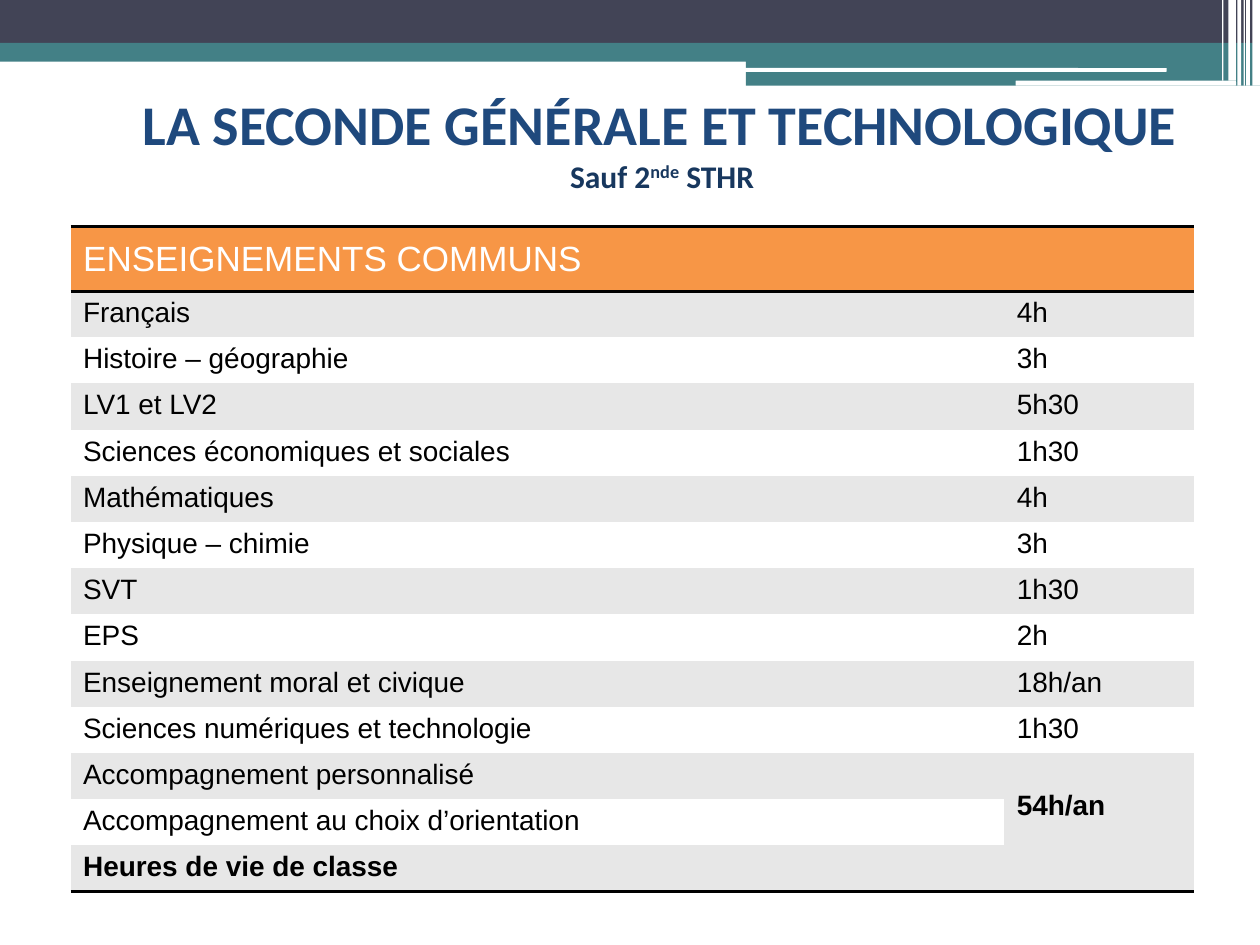
from dataclasses import dataclass

from lxml.etree import SubElement
from pptx import Presentation
from pptx.dml.color import RGBColor
from pptx.enum.shapes import MSO_SHAPE
from pptx.enum.text import MSO_ANCHOR, MSO_AUTO_SIZE, PP_ALIGN
from pptx.oxml.ns import qn
from pptx.util import Inches, Pt


@dataclass(frozen=True)
class Theme:
    teal: str = "438086"
    slate: str = "424456"
    white: str = "FFFFFF"
    black: str = "000000"
    title: str = "1F497D"
    subtitle: str = "17375E"
    orange: str = "F79646"
    grey: str = "E7E7E7"
    title_font: str = "Calibri"
    table_font: str = "Arial"
    title_size: int = 32
    subtitle_size: int = 18
    header_size: int = 20
    body_size: int = 16
    rule_width: int = 2


THEME = Theme()
NO_GRID_STYLE = "{2D5ABB26-0587-4C30-8999-92F81FD0307C}"

BARS = [
    (0, 0.4, 10, 0.09, THEME.teal),
    (0, 0, 10, 0.34, THEME.slate),
    (0, 0.34, 10, 0.1, THEME.teal),
    (5.92, 0.39, 4.08, 0.1, THEME.teal),
    (5.92, 0.48, 4.08, 0.2, THEME.teal),
]
ROUNDED_BARS = [(5.91, 0.54, 3.35, 0.03), (8.06, 0.64, 1.75, 0.04)]
STRIPES = [
    (9.94, 0.06, 0.68),
    (9.89, 0.03, 0.68),
    (9.87, 0.01, 0.68),
    (9.82, 0.03, 0.68),
    (9.75, 0.06, 0.64),
    (9.7, 0.01, 0.64),
]
HEADER = "ENSEIGNEMENTS COMMUNS"
COURSES = [
    ("Français", "4h"),
    ("Histoire – géographie", "3h"),
    ("LV1 et LV2", "5h30"),
    ("Sciences économiques et sociales", "1h30"),
    ("Mathématiques", "4h"),
    ("Physique – chimie", "3h"),
    ("SVT", "1h30"),
    ("EPS", "2h"),
    ("Enseignement moral et civique", "18h/an"),
    ("Sciences numériques et technologie", "1h30"),
    ("Accompagnement personnalisé", "54h/an"),
    ("Accompagnement au choix d’orientation", ""),
    ("Heures de vie de classe", ""),
]
SHARED_ROW = 11
BOLD_TEXTS = ("54h/an", "Heures de vie de classe")


def add_bar(slide, left, top, width, height, color, kind=MSO_SHAPE.RECTANGLE):
    s = slide.shapes.add_shape(kind, Inches(left), Inches(top), Inches(width), Inches(height))
    s.shadow.inherit = False
    s.fill.solid()
    s.fill.fore_color.rgb = RGBColor.from_string(color)
    s.line.fill.background()


def add_run(p, text, font, size, color, bold=False):
    r = p.add_run()
    r.text = text
    r.font.name = font
    r.font.size = Pt(size)
    r.font.bold = bold
    r.font.color.rgb = RGBColor.from_string(color)
    return r


def add_banner(slide):
    for bar in BARS:
        add_bar(slide, *bar)
    for box in ROUNDED_BARS:
        add_bar(slide, *box, THEME.white, MSO_SHAPE.ROUNDED_RECTANGLE)
    for left, width, height in STRIPES:
        add_bar(slide, left, 0, width, height, THEME.white)


def add_title(slide):
    sp = slide.shapes.title
    sp.left, sp.top, sp.width, sp.height = Inches(1.03), Inches(0.66), Inches(8.45), Inches(0.98)
    tf = sp.text_frame
    tf.word_wrap = True
    tf.auto_size = MSO_AUTO_SIZE.NONE
    tf.vertical_anchor = MSO_ANCHOR.TOP
    p = tf.paragraphs[0]
    p.alignment = PP_ALIGN.LEFT
    add_run(p, "LA SECONDE GÉNÉRALE ET TECHNOLOGIQUE", THEME.title_font, THEME.title_size, THEME.title, True)
    p = tf.add_paragraph()
    p.alignment = PP_ALIGN.CENTER
    for text, raised in (("Sauf 2", False), ("nde", True), (" STHR", False)):
        r = add_run(p, text, THEME.title_font, THEME.subtitle_size, THEME.subtitle, True)
        if raised:
            r._r.get_or_add_rPr().set("baseline", "30000")


def fill_cell(cell, text, fill, size, color):
    cell.fill.solid()
    cell.fill.fore_color.rgb = RGBColor.from_string(fill)
    if text:
        add_run(cell.text_frame.paragraphs[0], text, THEME.table_font, size, color, text in BOLD_TEXTS)


def add_rules(cell, *edges):
    tcPr = cell._tc.get_or_add_tcPr()
    for i, edge in enumerate(edges):
        ln = SubElement(tcPr, qn(f"a:{edge}"), w=str(Pt(THEME.rule_width)))
        fill = SubElement(ln, qn("a:solidFill"))
        SubElement(fill, qn("a:srgbClr"), val=THEME.black)
        tcPr.insert(i, ln)


def add_timetable(slide):
    count = len(COURSES)
    height, header_height = 5.28, 0.51
    frame = slide.shapes.add_table(count + 1, 2, Inches(0.56), Inches(1.8), Inches(8.92), Inches(height))
    table = frame.table
    table._tbl.tblPr.find(qn("a:tableStyleId")).text = NO_GRID_STYLE
    table.horz_banding = False
    table.first_row = False
    for column, width in zip(table.columns, (7.41, 1.51)):
        column.width = Inches(width)
    table.rows[0].height = Inches(header_height)
    for text, cell in zip((HEADER, ""), table.rows[0].cells):
        fill_cell(cell, text, THEME.orange, THEME.header_size, THEME.white)
        cell.vertical_anchor = MSO_ANCHOR.MIDDLE
        add_rules(cell, "lnT", "lnB")
    for i, course in enumerate(COURSES, start=1):
        table.rows[i].height = Inches((height - header_height) / count)
        fill = THEME.grey if i % 2 else THEME.white
        for text, cell in zip(course, table.rows[i].cells):
            fill_cell(cell, text, fill, THEME.body_size, THEME.black)
    shared = table.cell(SHARED_ROW, 1)
    shared.merge(table.cell(count, 1))
    shared.margin_top = Inches(0.3)
    for cell in (shared, table.cell(count, 0), table.cell(count, 1)):
        add_rules(cell, "lnB")


def main():
    prs = Presentation()
    prs.slide_width, prs.slide_height = Inches(10), Inches(7.5)
    slide = prs.slides.add_slide(prs.slide_layouts[5])
    add_banner(slide)
    add_title(slide)
    add_timetable(slide)
    prs.save("out.pptx")


if __name__ == "__main__":
    main()
